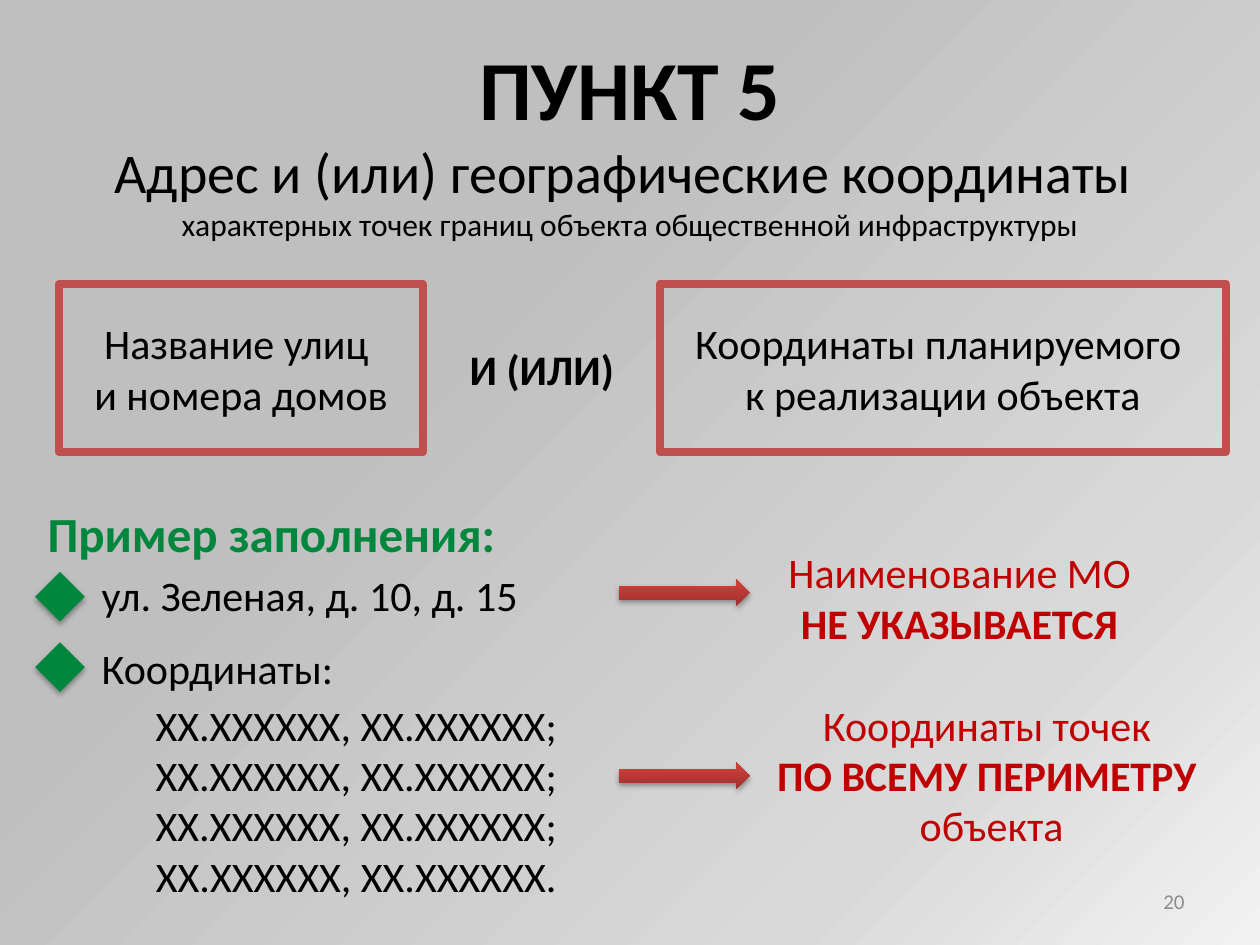
from pptx import Presentation
from pptx.dml.color import RGBColor
from pptx.enum.shapes import MSO_SHAPE
from pptx.enum.text import MSO_ANCHOR, MSO_AUTO_SIZE, PP_ALIGN
from pptx.oxml import parse_xml
from pptx.oxml.ns import nsdecls, qn
from pptx.util import Cm, Pt

rgb = RGBColor.from_string
BLACK, RED, GREEN = "000000", "C00000", "00863D"
LEFT, CENTER, RIGHT = PP_ALIGN.LEFT, PP_ALIGN.CENTER, PP_ALIGN.RIGHT


def write(sp, lines, color=BLACK, align=LEFT, anchor=MSO_ANCHOR.TOP, wrap=True):
    """Each line is (text, size, bold)."""
    tf = sp.text_frame
    tf.word_wrap = wrap
    tf.auto_size = MSO_AUTO_SIZE.NONE
    tf.vertical_anchor = anchor
    tf.text = "\n".join(text for text, size, bold in lines)
    for p, (text, size, bold) in zip(tf.paragraphs, lines):
        p.alignment = align
        p.space_before = Pt(0)
        for r in p.runs:
            r.font.name = "Calibri"
            r.font.size = Pt(size)
            r.font.bold = bold
            r.font.color.rgb = rgb(color)


def set_gradient(parent, stops, direction):
    """Replace the solid fill of parent with a gradient."""
    gs = "".join(f'<a:gs pos="{pos * 1000}"><a:srgbClr val="{color}"/></a:gs>'
                 for pos, color in stops)
    grad = parse_xml(f'<a:gradFill {nsdecls("a")} rotWithShape="1">'
                     f'<a:gsLst>{gs}</a:gsLst>{direction}</a:gradFill>')
    parent.replace(parent.find(qn("a:solidFill")), grad)


prs = Presentation()
prs.slide_width, prs.slide_height = Cm(25.4), Cm(19.05)
s = prs.slides.add_slide(prs.slide_layouts[5])

# Background
s.background.fill.solid()
set_gradient(s._element.cSld.find(qn("p:bg")).find(qn("p:bgPr")),
             [(0, "F2F2F2"), (22, "D9D9D9"), (65, "BFBFBF")],
             '<a:path path="circle"><a:fillToRect l="100000" t="100000"/></a:path>')

# Title
title = s.shapes.title
title.left, title.top, title.width, title.height = Cm(0), Cm(0.61), Cm(25.4), Cm(4.45)
write(title, [("ПУНКТ 5", 48, True),
              ("Адрес и (или) географические координаты ", 32, False),
              ("характерных точек границ объекта общественной инфраструктуры", 18, False)],
      align=CENTER)

# Framed options
options = [
    (1.19, 7.34, ["Название улиц ", "и номера домов"]),
    (13.31, 11.4, ["Координаты планируемого ", "к реализации объекта"]),
]
for x, w, lines in options:
    sp = s.shapes.add_shape(MSO_SHAPE.RECTANGLE, Cm(x), Cm(5.72), Cm(w), Cm(3.4))
    sp.shadow.inherit = False
    sp.fill.background()
    sp.line.color.rgb = rgb("C0504D")
    sp.line.width = Pt(4.5)
    write(sp, [(line, 24, False) for line in lines], align=CENTER, anchor=MSO_ANCHOR.MIDDLE)

sp = s.shapes.add_textbox(Cm(9.22), Cm(6.81), Cm(3.45), Cm(1.27))
write(sp, [("И (ИЛИ)", 24, True)], wrap=False)

# Example: heading, bulleted lines and coordinates
coords = ["ХХ.ХХХХХХ, ХХ.ХХХХХХ" + end for end in ";;;."]
texts = [
    (0.71, 10.03, 11, 1.45, [("Пример заполнения:", 28, True)], GREEN, LEFT),
    (1.8, 11.35, 11.13, 1.27, [("ул. Зеленая, д. 10, д. 15", 24, False)], BLACK, LEFT),
    (1.8, 12.83, 6.76, 1.27, [("Координаты:", 24, False)], BLACK, LEFT),
    (1.45, 13.97, 11.46, 4.37, [(line, 24, False) for line in coords], BLACK, CENTER),
    (15.09, 10.9, 8.51, 2.31,
     [("Наименование МО", 24, False), ("НЕ УКАЗЫВАЕТСЯ", 24, True)], RED, CENTER),
    (15.09, 13.97, 9.8, 3.33,
     [("Координаты точек ", 24, False), ("ПО ВСЕМУ ПЕРИМЕТРУ ", 24, True),
      ("объекта", 24, False)], RED, CENTER),
]
for x, y, w, h, lines, color, align in texts:
    sp = s.shapes.add_textbox(Cm(x), Cm(y), Cm(w), Cm(h))
    write(sp, lines, color, align)

# Diamond markers, with the theme shadow
for y in (11.53, 12.95):
    sp = s.shapes.add_shape(MSO_SHAPE.DIAMOND, Cm(0.71), Cm(y), Cm(1), Cm(1))
    sp.fill.solid()
    sp.fill.fore_color.rgb = rgb(GREEN)
    sp.line.fill.background()

# Arrows to the remarks, with the theme shadow
for y in (11.68, 15.37):
    sp = s.shapes.add_shape(MSO_SHAPE.RIGHT_ARROW, Cm(12.47), Cm(y), Cm(2.64), Cm(0.54))
    sp.fill.solid()
    set_gradient(sp._element.spPr, [(0, "9C2F2D"), (80, "CB3E3A"), (100, "CE3B37")],
                 '<a:lin ang="16200000" scaled="0"/>')
    sp.line.fill.background()

# Slide number
sp = s.shapes.add_textbox(Cm(18.21), Cm(17.65), Cm(5.92), Cm(1.02))
write(sp, [("20", 12, False)], "8C8C8C", RIGHT, MSO_ANCHOR.MIDDLE)

prs.save("out.pptx")
